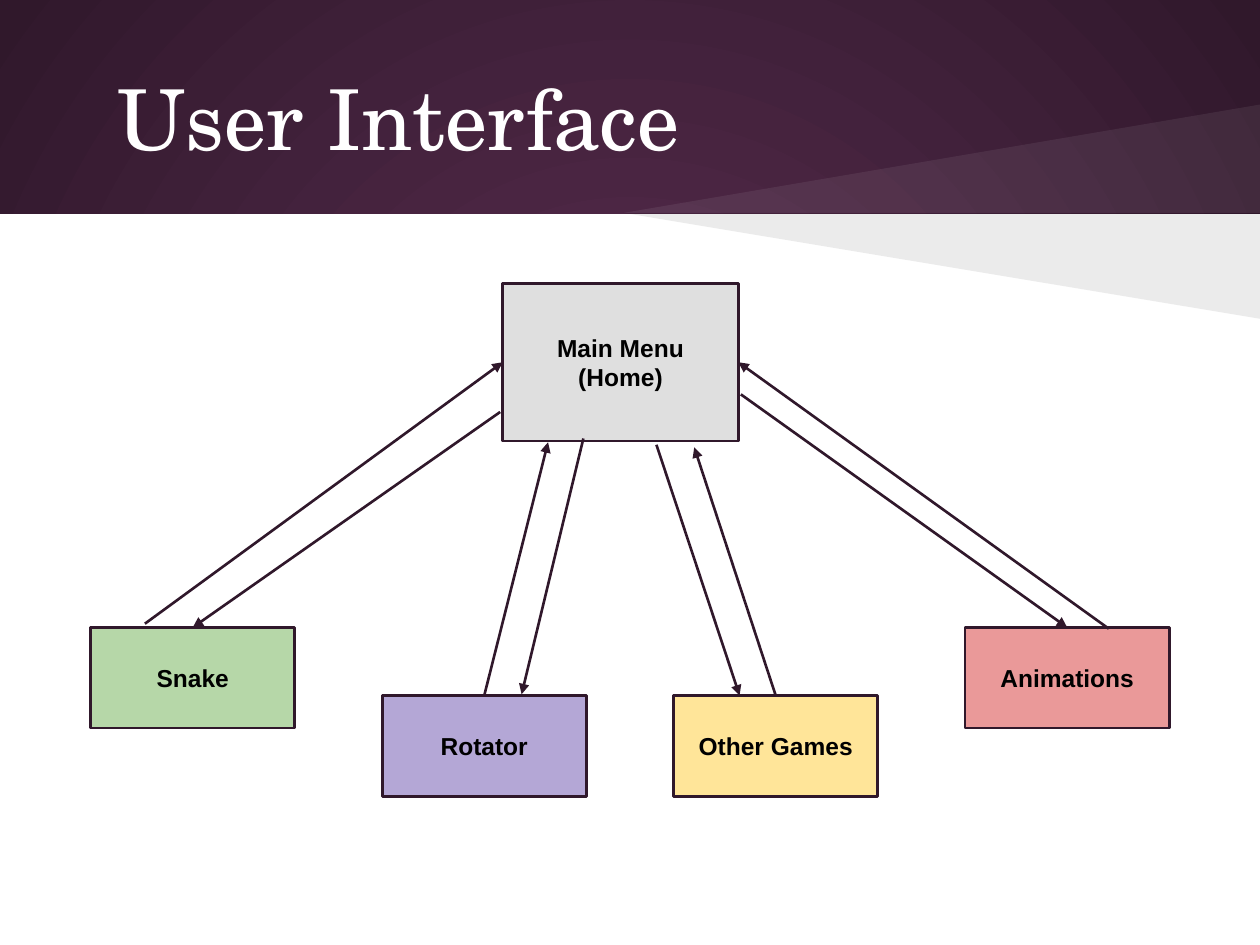
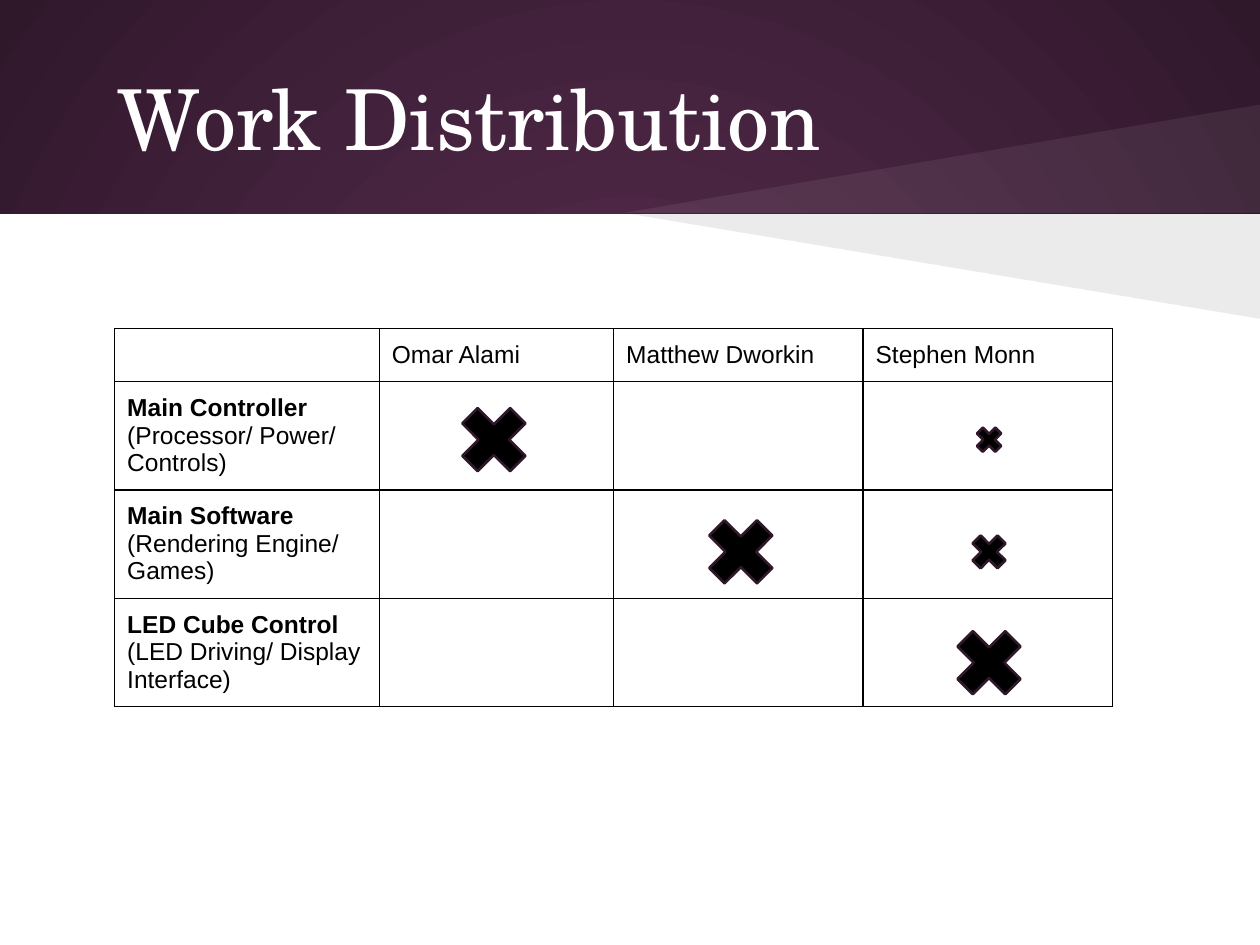
"""Build the user interface and work distribution slides."""
from dataclasses import dataclass

from lxml.etree import SubElement
from pptx import Presentation
from pptx.dml.color import RGBColor
from pptx.enum.shapes import MSO_CONNECTOR, MSO_SHAPE
from pptx.enum.text import MSO_ANCHOR, PP_ALIGN
from pptx.oxml.ns import qn
from pptx.util import Inches, Pt

TOP, LEFT, RIGHT = 0, 1, 3


@dataclass(frozen=True)
class Theme:
    title_font: str = "TeX Gyre Schola"
    body_font: str = "Arial"
    title_size: float = 48
    body_size: float = 14
    outline_width: float = 1.5
    border_width: float = 0.75
    inset: float = 0.1
    plum: str = "592D50"
    dark_plum: str = "30182B"
    white: str = "FFFFFF"
    black: str = "000000"
    grey: str = "DFDFDF"
    green: str = "B6D7A8"
    purple: str = "B4A7D6"
    yellow: str = "FFE599"
    red: str = "EA9999"


def color(code):
    return RGBColor.from_string(code)


def add_span(para, text, *, font, size, code, bold=False):
    span = para.add_run()
    span.text = text
    span.font.name = font
    span.font.size = Pt(size)
    span.font.bold = bold
    span.font.color.rgb = color(code)


def set_insets(holder, inset):
    holder.margin_left = holder.margin_right = Inches(inset)
    holder.margin_top = holder.margin_bottom = Inches(inset)


class SlideBuilder:
    def __init__(self, deck, theme):
        self.deck = deck
        self.theme = theme
        self.page = None
        self.paint_background()

    def paint_background(self):
        fill = self.deck.slide_master.background.fill
        fill.gradient()
        for stop, code in zip(fill.gradient_stops, (self.theme.plum, self.theme.dark_plum)):
            stop.color.rgb = color(code)
        for position, stop in enumerate(fill.gradient_stops):
            stop.position = position
        background = self.deck.slide_master.element
        linear = next(background.cSld.iter(qn("a:lin")))
        gradient = linear.getparent()
        gradient.remove(linear)
        circle = SubElement(gradient, qn("a:path"), path="circle")
        SubElement(circle, qn("a:fillToRect"), l="50000", t="50000", r="50000", b="50000")

    def start_page(self, title_text):
        self.page = self.deck.slides.add_slide(self.deck.slide_layouts[5])
        self.add_shape(MSO_SHAPE.RECTANGLE, 0, 1.7, 10, 5.8, self.theme.white, outlined=False)
        self.add_wedge(0.83, self.theme.white, 7)
        wedge = self.add_wedge(2.53, self.theme.black, 8)
        wedge.element.addnext(self.format_title(title_text).element)

    def format_title(self, text):
        title = self.page.shapes.title
        title.left, title.top = Inches(0.5), Inches(0.3)
        title.width, title.height = Inches(9), Inches(1.25)
        frame = title.text_frame
        frame.vertical_anchor = MSO_ANCHOR.MIDDLE
        set_insets(frame, self.theme.inset)
        para = frame.paragraphs[0]
        para.alignment = PP_ALIGN.LEFT
        properties = para._p.get_or_add_pPr()
        properties.set("marL", "0")
        properties.set("indent", str(Inches(0.33)))
        add_span(para, text, font=self.theme.title_font,
                 size=self.theme.title_size, code=self.theme.white)
        return title

    def add_wedge(self, edge_y, code, opacity):
        builder = self.page.shapes.build_freeform(Inches(10), Inches(1.69))
        builder.add_line_segments([(Inches(4.95), Inches(1.69)), (Inches(10), Inches(edge_y))])
        wedge = builder.convert_to_shape()
        self.style_shape(wedge, code, outlined=False)
        tint = wedge.element.spPr.find(qn("a:solidFill"))[0]
        SubElement(tint, qn("a:alpha"), val=str(opacity * 1000))
        return wedge

    def style_shape(self, shape, code, outlined):
        shape.shadow.inherit = False
        shape.fill.solid()
        shape.fill.fore_color.rgb = color(code)
        if outlined:
            self.style_line(shape)
        else:
            shape.line.fill.background()

    def style_line(self, shape):
        shape.line.color.rgb = color(self.theme.dark_plum)
        shape.line.width = Pt(self.theme.outline_width)
        SubElement(shape.element.spPr.find(qn("a:ln")), qn("a:round"))

    def add_shape(self, kind, left, top, width, height, code, outlined=True):
        shape = self.page.shapes.add_shape(
            kind, Inches(left), Inches(top), Inches(width), Inches(height))
        self.style_shape(shape, code, outlined)
        return shape

    def add_box(self, lines, left, top, width, height, code):
        box = self.add_shape(MSO_SHAPE.RECTANGLE, left, top, width, height, code)
        frame = box.text_frame
        frame.word_wrap = True
        frame.vertical_anchor = MSO_ANCHOR.MIDDLE
        set_insets(frame, self.theme.inset)
        for index, line in enumerate(lines):
            para = frame.add_paragraph() if index else frame.paragraphs[0]
            para.alignment = PP_ALIGN.CENTER
            add_span(para, line, font=self.theme.body_font, size=self.theme.body_size,
                     code=self.theme.black, bold=True)
        return box

    def add_arrow(self, start, end, begin_at=None, end_at=None):
        arrow = self.page.shapes.add_connector(
            MSO_CONNECTOR.STRAIGHT, *map(Inches, start), *map(Inches, end))
        if begin_at:
            arrow.begin_connect(*begin_at)
        if end_at:
            arrow.end_connect(*end_at)
        self.style_line(arrow)
        properties = arrow.element.spPr
        SubElement(properties.find(qn("a:ln")), qn("a:tailEnd"), type="triangle")
        SubElement(properties, qn("a:effectLst"))

    def add_cross(self, center_x, center_y, size):
        self.add_shape(MSO_SHAPE.MATH_MULTIPLY, center_x - size / 2, center_y - size / 2,
                       size, size, self.theme.black)

    def add_table(self, rows, left, top, widths, heights):
        table = self.page.shapes.add_table(
            len(rows), len(widths), Inches(left), Inches(top),
            Inches(sum(widths)), Inches(sum(heights))).table
        table.first_row = table.horz_banding = False
        for column, width in zip(table.columns, widths):
            column.width = Inches(width)
        for table_row, height, spans in zip(table.rows, heights, rows):
            table_row.height = Inches(height)
            for cell, cell_spans in zip(table_row.cells, spans):
                self.format_cell(cell, cell_spans)

    def format_cell(self, cell, spans):
        properties = cell._tc.get_or_add_tcPr()
        for side in ("a:lnL", "a:lnR", "a:lnT", "a:lnB"):
            border = SubElement(properties, qn(side), w=str(Pt(self.theme.border_width)))
            paint = SubElement(border, qn("a:solidFill"))
            SubElement(paint, qn("a:srgbClr"), val=self.theme.black)
        cell.fill.background()
        if spans:
            set_insets(cell, self.theme.inset)
        for text, bold in spans:
            add_span(cell.text_frame.paragraphs[0], text, font=self.theme.body_font,
                     size=self.theme.body_size, code=self.theme.black, bold=bold)


def build_user_interface(builder):
    theme = builder.theme
    builder.start_page("User Interface")
    menu = builder.add_box(["Main Menu", "(Home)"], 3.99, 2.25, 1.87, 1.25, theme.grey)
    screens = [("Snake", 4.98, theme.green), ("Rotator", 5.52, theme.purple),
               ("Other Games", 5.52, theme.yellow), ("Animations", 4.98, theme.red)]
    snake, rotator, games, animations = [
        builder.add_box([name], 0.72 + index * 6.94 / 3, top, 1.62, 0.8, code)
        for index, (name, top, code) in enumerate(screens)]

    builder.add_arrow((3.97, 3.27), (1.53, 4.98), end_at=(snake, TOP))
    builder.add_arrow((4.63, 3.48), (4.14, 5.51))
    builder.add_arrow((5.21, 3.53), (5.87, 5.52))
    builder.add_arrow((5.88, 3.13), (8.47, 4.98), end_at=(animations, TOP))
    builder.add_arrow((1.15, 4.95), (3.99, 2.88), end_at=(menu, LEFT))
    builder.add_arrow((3.84, 5.52), (4.35, 3.51), begin_at=(rotator, TOP))
    builder.add_arrow((8.8, 4.99), (5.86, 2.88), end_at=(menu, RIGHT))
    builder.add_arrow((6.16, 5.52), (5.51, 3.55), begin_at=(games, TOP))


def build_work_distribution(builder):
    builder.start_page("Work Distribution")
    people = ["Omar Alami", "Matthew Dworkin", "Stephen Monn"]
    tasks = [("Main Controller ", "(Processor/ Power/ Controls)"),
             ("Main Software ", "(Rendering Engine/ Games)"),
             ("LED Cube Control ", "(LED Driving/ Display Interface)")]
    rows = [[[]] + [[(person, False)] for person in people]]
    rows += [[[(task, True), (detail, False)], [], [], []] for task, detail in tasks]
    builder.add_table(rows, 0.91, 2.61, [2.1, 1.86, 1.98, 1.98], [0.42] + [0.86] * 3)

    omar, matthew, stephen = 3.92, 5.88, 7.85
    controller, software, cube = 3.49, 4.38, 5.26
    for person, task, size in [(omar, controller, 0.73), (matthew, software, 0.73),
                               (stephen, cube, 0.73), (stephen, software, 0.38),
                               (stephen, controller, 0.28)]:
        builder.add_cross(person, task, size)


def main():
    deck = Presentation()
    deck.slide_width, deck.slide_height = Inches(10), Inches(7.5)
    builder = SlideBuilder(deck, Theme())
    build_user_interface(builder)
    build_work_distribution(builder)
    deck.save("out.pptx")


if __name__ == "__main__":
    main()
